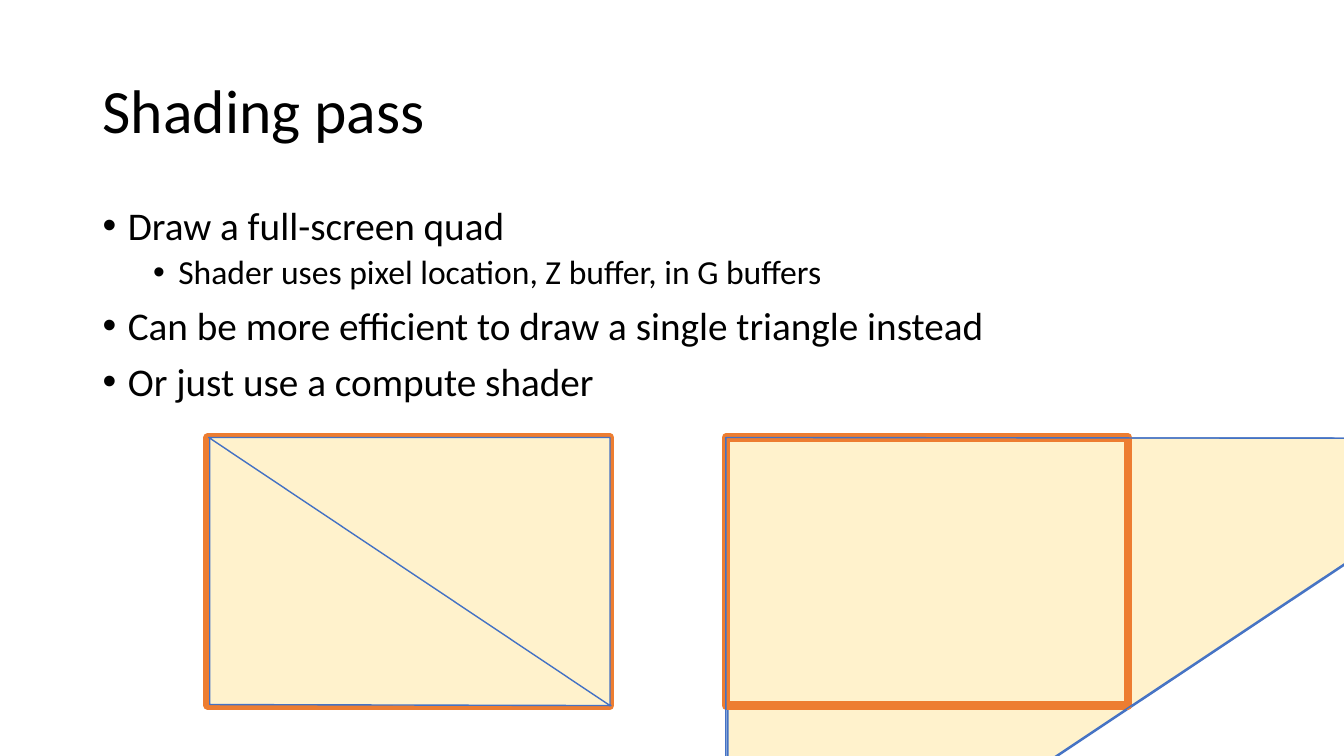
from lxml import etree
from pptx import Presentation
from pptx.dml.color import RGBColor
from pptx.enum.shapes import MSO_SHAPE
from pptx.enum.text import MSO_ANCHOR
from pptx.oxml.ns import qn
from pptx.util import Inches, Pt

RECTANGLE = MSO_SHAPE.RECTANGLE
TOP, MIDDLE = MSO_ANCHOR.TOP, MSO_ANCHOR.MIDDLE

COLORS = {"text": "000000", "screen": "ED7D31", "edge": "4472C4", "area": "FFF2CC"}
FONT = "Calibri"

SCREEN_TOP, SCREEN_W, SCREEN_H = 4.34, 3.99, 2.66
QUAD_LEFT, TRIANGLE_LEFT = 2.06, 7.2
BULLETS = [
    (0, "Draw a full-screen quad"),
    (1, "Shader uses pixel location, Z buffer, in G buffers"),
    (0, "Can be more efficient to draw a single triangle instead"),
    (0, "Or just use a compute shader"),
]


def rgb(name):
    return RGBColor.from_string(COLORS[name])


def add_text(p, text, size, before=0, indent=None):
    """Fill a paragraph; an indent in inches also gives it a hanging bullet."""
    p.line_spacing = 0.9
    p.space_before = Pt(before)
    r = p.add_run()
    r.text = text
    r.font.name, r.font.size = FONT, Pt(size)
    r.font.color.rgb = rgb("text")
    if indent is not None:
        pPr = p._p.get_or_add_pPr()
        pPr.set("marL", str(Inches(indent)))
        pPr.set("indent", str(Inches(-0.25)))
        etree.SubElement(pPr, qn("a:buFont"), typeface="Arial")
        etree.SubElement(pPr, qn("a:buChar"), char="•")


class SlideBuilder:
    def __init__(self, slide):
        self.s = slide

    def text_frame(self, left, top, width, height, anchor=TOP):
        box = self.s.shapes.add_textbox(*map(Inches, (left, top, width, height)))
        tf = box.text_frame
        tf.word_wrap = True
        tf.vertical_anchor = anchor
        return tf

    def style(self, sp, line, width, fill=None):
        sp.shadow.inherit = False
        sp.line.color.rgb = rgb(line)
        sp.line.width = Pt(width)
        if fill:
            sp.fill.solid()
            sp.fill.fore_color.rgb = rgb(fill)
        else:
            sp.fill.background()

    def screen(self, left):
        sp = self.s.shapes.add_shape(
            RECTANGLE, *map(Inches, (left, SCREEN_TOP, SCREEN_W, SCREEN_H)))
        self.style(sp, "screen", 6)

    def triangle(self, corners, fill=None):
        start, *rest = [(Inches(x), Inches(y)) for x, y in corners]
        builder = self.s.shapes.build_freeform(*start)
        builder.add_line_segments(rest, close=True)
        self.style(builder.convert_to_shape(), "edge", 1, fill)

    def full_screen_triangle(self, left, fill=None):
        """Triangle twice the screen's size, reaching past the slide edge."""
        self.triangle([(left, SCREEN_TOP), (left + 8, SCREEN_TOP + 0.01),
                       (left, SCREEN_TOP + 5.34)], fill)


def main():
    prs = Presentation()
    prs.slide_width, prs.slide_height = Inches(13.33), Inches(7.5)
    slide = SlideBuilder(prs.slides.add_slide(prs.slide_layouts[6]))

    slide.full_screen_triangle(TRIANGLE_LEFT + 0.02, "area")

    title = slide.text_frame(0.92, 0.4, 11.5, 1.45, MIDDLE)
    add_text(title.paragraphs[0], "Shading pass", 44)

    body = slide.text_frame(0.92, 2, 11.5, 4.76)
    for i, (level, text) in enumerate(BULLETS):
        p = body.add_paragraph() if i else body.paragraphs[0]
        p.level = level
        add_text(p, text, 28 - 4 * level, 10 - 5 * level, 0.25 + 0.5 * level)

    for left in (QUAD_LEFT, TRIANGLE_LEFT):
        slide.screen(left)

    left, right = QUAD_LEFT + 0.01, QUAD_LEFT + SCREEN_W
    bottom = SCREEN_TOP + SCREEN_H
    slide.triangle([(left + 0.01, SCREEN_TOP), (right + 0.01, bottom),
                    (left + 0.01, bottom - 0.01)], "area")
    slide.triangle([(left, SCREEN_TOP), (right, SCREEN_TOP), (right, bottom)], "area")
    slide.full_screen_triangle(TRIANGLE_LEFT)

    prs.save("out.pptx")


if __name__ == "__main__":
    main()
